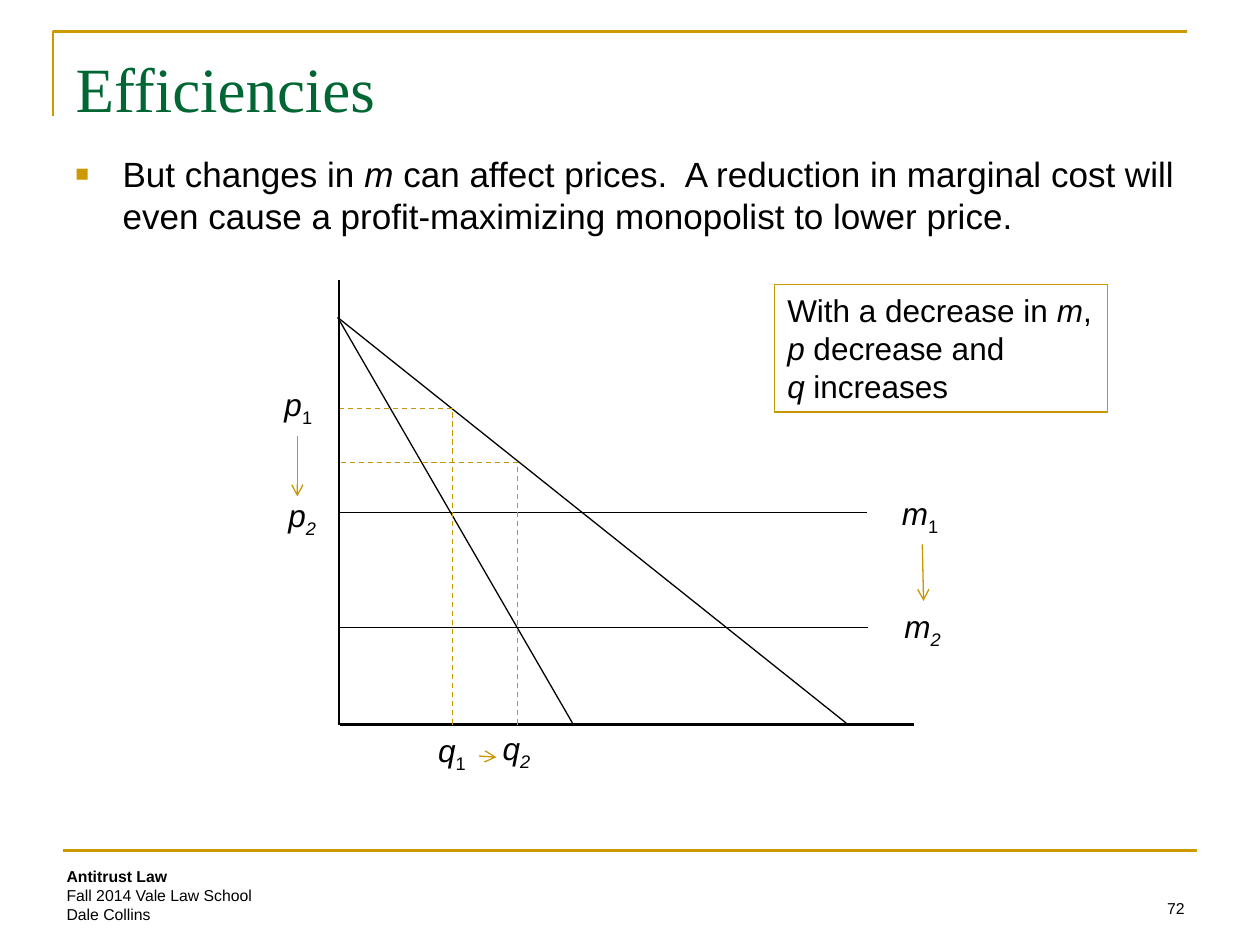
from dataclasses import dataclass
from typing import NamedTuple

from lxml import etree
from pptx import Presentation
from pptx import util as u
from pptx.dml.color import RGBColor
from pptx.enum import dml, shapes, text
from pptx.oxml import ns


@dataclass(frozen=True)
class Theme:
    gold: str = "CC9900"
    guide: str = "C89600"
    green: str = "006633"
    ink: str = "000000"
    heading_font: str = "Times New Roman"
    body_font: str = "Arial"
    title: float = 36
    body: float = 20
    label: float = 18
    footer: float = 9
    heavy: float = 1.5
    thin: float = 0.75


THEME = Theme()


class Span(NamedTuple):
    words: str
    italic: bool = False
    bold: bool = False
    subscript: bool = False


class Box(NamedTuple):
    left: float
    top: float
    width: float
    height: float


class Segment(NamedTuple):
    x1: float
    y1: float
    x2: float
    y2: float
    color: str = THEME.ink
    weight: float = THEME.thin
    dashed: bool = False
    arrow: bool = False


class Label(NamedTuple):
    symbol: str
    index: str
    left: float
    top: float
    width: float


def sub(parent, tag: str, **attributes: str):
    return etree.SubElement(parent, ns.qn(tag), attributes)


def place(shape, box: Box) -> None:
    shape.left, shape.top, shape.width, shape.height = map(u.Pt, box)


def write(shape, paragraphs: list[list[Span]], *, size: float = THEME.label,
          font: str = THEME.body_font, color: str = THEME.ink,
          align=text.PP_ALIGN.LEFT, anchor=text.MSO_ANCHOR.TOP,
          wrap: bool = True, grow: bool = False) -> None:
    """Fill a shape with formatted spans, one list per paragraph."""
    frame = shape.text_frame
    frame.word_wrap = wrap
    frame.vertical_anchor = anchor
    frame.auto_size = (text.MSO_AUTO_SIZE.SHAPE_TO_FIT_TEXT if grow
                       else text.MSO_AUTO_SIZE.NONE)
    for number, spans in enumerate(paragraphs):
        paragraph = frame.add_paragraph() if number else frame.paragraphs[0]
        paragraph.alignment = align
        for span in spans:
            for row, words in enumerate(span.words.split("\n")):
                if row:
                    paragraph.add_line_break()
                if not words:
                    continue
                run = paragraph.add_run()
                run.text = words
                run.font.name = font
                run.font.size = u.Pt(size)
                run.font.bold = span.bold
                run.font.italic = span.italic
                run.font.color.rgb = RGBColor.from_string(color)
                if span.subscript:
                    run.font._element.set("baseline", "-25000")


def add_text(slide, box: Box, paragraphs: list[list[Span]], **style):
    shape = slide.shapes.add_textbox(*map(u.Pt, box))
    write(shape, paragraphs, **style)
    return shape


def set_line(shape, color: str, weight: float) -> None:
    shape.line.color.rgb = RGBColor.from_string(color)
    shape.line.width = u.Pt(weight)


def draw_segment(slide, segment: Segment) -> None:
    connector = slide.shapes.add_connector(
        shapes.MSO_CONNECTOR.STRAIGHT, *map(u.Pt, segment[:4]))
    set_line(connector, segment.color, segment.weight)
    if segment.dashed:
        connector.line.dash_style = dml.MSO_LINE.DASH
    properties = connector._element.spPr
    if segment.arrow:
        sub(properties.find(ns.qn("a:ln")), "a:tailEnd", type="arrow")
    sub(properties, "a:effectLst")


def draw_label(slide, label: Label) -> None:
    # The second index of each pair is italic like its symbol
    spans = [Span(label.symbol, italic=True),
             Span(label.index, italic=label.index == "2", subscript=True)]
    add_text(slide, Box(label.left, label.top, label.width, 28.8), [spans],
             wrap=False, grow=True)


def add_bullet(paragraph) -> None:
    properties = paragraph._p.get_or_add_pPr()
    indent = u.Pt(27)
    properties.set("marL", str(indent))
    properties.set("indent", str(-indent))
    sub(sub(properties, "a:buClr"), "a:srgbClr", val=THEME.gold)
    sub(properties, "a:buSzPct", val="65000")
    sub(properties, "a:buFont", typeface=THEME.body_font)
    sub(properties, "a:buChar", char="■")


def draw_frame(slide) -> None:
    # Corner rule round the title, and rule above the footer
    builder = slide.shapes.build_freeform(u.Pt(30.24), u.Pt(66.24))
    builder.add_line_segments(
        [(u.Pt(30.24), u.Pt(18)), (u.Pt(678.24), u.Pt(18))], close=False)
    corner = builder.convert_to_shape()
    corner.shadow.inherit = False
    corner.fill.background()
    set_line(corner, THEME.gold, THEME.heavy)
    draw_segment(slide, Segment(36, 486, 684, 486, THEME.gold, THEME.heavy))

    # Course details and page number
    add_text(slide, Box(30.96, 491.76, 336.24, 40.32),
             [[Span("Antitrust Law\n", bold=True),
               Span("Fall 2014\u2003Vale Law School\nDale Collins".replace("\u2003", " "))]],
             size=THEME.footer, grow=True)
    add_text(slide, Box(516.24, 491.76, 167.76, 36), [[Span("72")]],
             size=THEME.footer, align=text.PP_ALIGN.RIGHT,
             anchor=text.MSO_ANCHOR.BOTTOM)


def draw_diagram(slide) -> None:
    axis_x, axis_y = 193.7, 414
    top = 181.44                    # where demand meets the price axis
    q1, q2 = 258.48, 295.92
    p1, p2 = 233.28, 264.24
    m1, m2 = 293.04, 358.56

    axes = [Segment(axis_x, 159.84, axis_x, axis_y, weight=THEME.heavy),
            Segment(axis_x + 0.7, axis_y, 522, axis_y, weight=THEME.heavy)]
    demand_and_revenue = [Segment(193, top, end, axis_y)
                          for end in (484.56, 327.6)]
    costs = [Segment(axis_x, m, end, m) for m, end in ((m1, 495.36), (m2, 496.08))]
    guides = [Segment(*ends, THEME.guide, dashed=True)
              for q, p in ((q2, p2), (q1, p1))
              for ends in ((q, axis_y, q, p), (q, p, axis_x + 0.7, p))]
    shifts = [Segment(*ends, THEME.guide, arrow=True)
              for ends in ((527.04, 311.04, 527.76, 343.44),
                           (169.92, 249.12, 169.92, 283.68),
                           (273.6, 432, 283.68, 432.72))]
    for segment in axes + demand_and_revenue + costs + guides + shifts:
        draw_segment(slide, segment)

    for label in (Label("m", "1", 508.32, 278.64, 36.72),
                  Label("m", "2", 509.76, 343.44, 36.72),
                  Label("p", "1", 155.52, 216.72, 31.68),
                  Label("p", "2", 157.68, 280.08, 31.68),
                  Label("q", "1", 243.36, 414, 31.68),
                  Label("q", "2", 280.08, 413.28, 31.68)):
        draw_label(slide, label)


def draw_callout(slide) -> None:
    callout = slide.shapes.add_shape(
        shapes.MSO_SHAPE.RECTANGLE, *map(u.Pt, Box(442.8, 162.72, 190.08, 72.72)))
    callout.shadow.inherit = False
    callout.fill.background()
    set_line(callout, THEME.guide, THEME.thin)
    write(callout,
          [[Span("With a decrease in "), Span("m", italic=True), Span(",")],
           [Span("p", italic=True), Span(" decrease and")],
           [Span("q", italic=True), Span(" increases")]],
          wrap=False, grow=True)


def main() -> None:
    deck = Presentation()
    deck.slide_width, deck.slide_height = u.Pt(720), u.Pt(540)
    slide = deck.slides.add_slide(deck.slide_layouts[5])
    draw_frame(slide)

    # Title and main point
    title = slide.shapes.title
    place(title, Box(36, 21.6, 648, 56.16))
    write(title, [[Span("Efficiencies")]], size=THEME.title,
          font=THEME.heading_font, color=THEME.green,
          anchor=text.MSO_ANCHOR.MIDDLE)
    point = add_text(
        slide, Box(36, 83.52, 648, 403.92),
        [[Span("But changes in "), Span("m", italic=True),
          Span(" can affect prices.  A reduction in marginal cost will even "
               "cause a profit-maximizing monopolist to lower price.")]],
        size=THEME.body)
    paragraph = point.text_frame.paragraphs[0]
    paragraph.space_before = u.Pt(12)
    add_bullet(paragraph)

    draw_diagram(slide)
    draw_callout(slide)
    deck.save("out.pptx")


if __name__ == "__main__":
    main()
